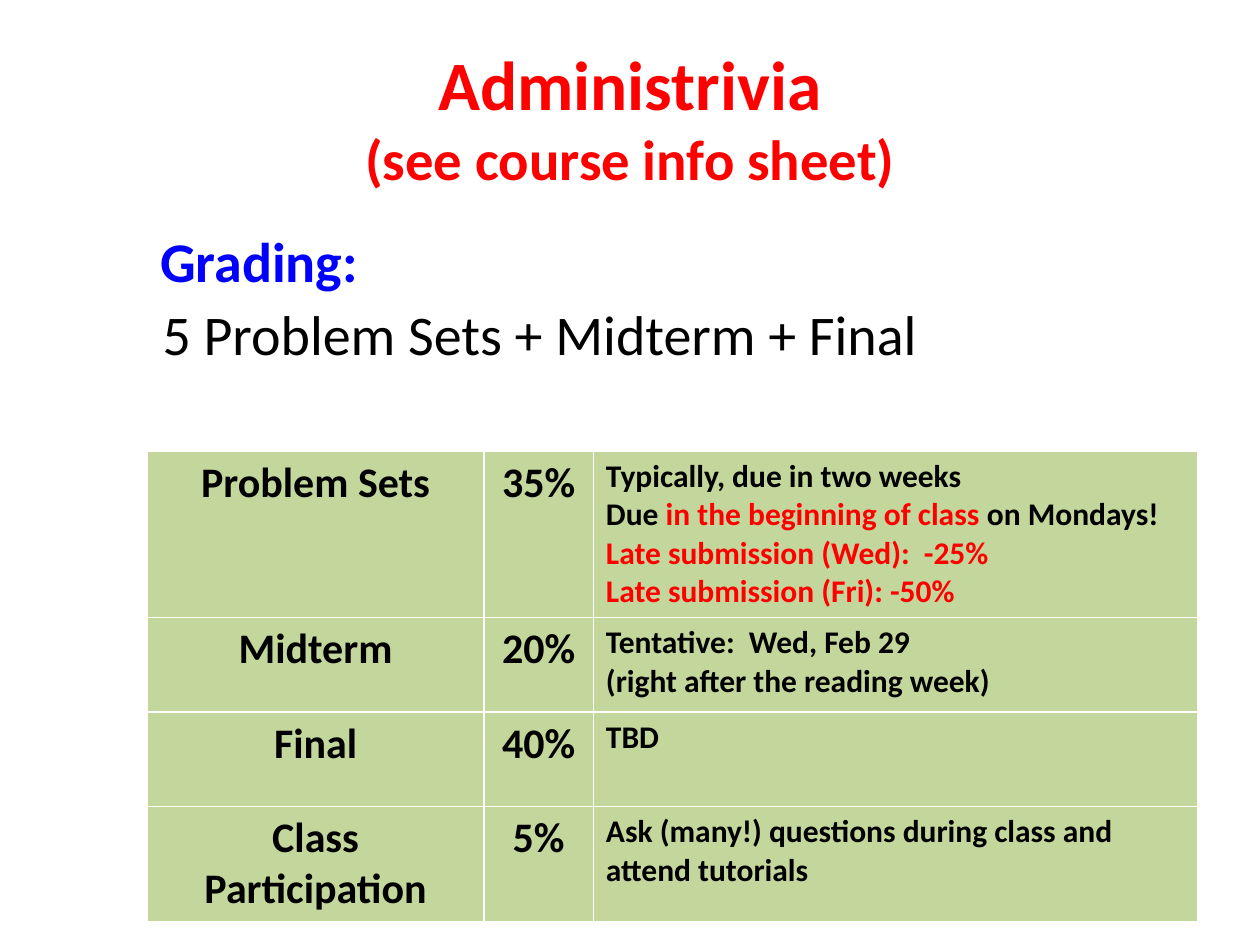
from dataclasses import dataclass

from pptx import Presentation
from pptx.dml.color import RGBColor
from pptx.enum import text
from pptx.oxml import ns
from pptx.util import Inches, Pt
from lxml import etree


@dataclass(frozen=True)
class Theme:
    font: str = "Calibri"
    red: str = "FF0000"
    blue: str = "0000FF"
    black: str = "000000"
    green: str = "C3D69B"
    title: float = 39.6
    subtitle: float = 32.4
    body: float = 32
    label: float = 24
    note: float = 18


THEME = Theme()

# Each note is a list of lines; each line is a list of (text, colour) runs
GRADING = [
    ("Problem Sets", "35%", [
        [("Typically, due in two weeks", THEME.black)],
        [("Due ", THEME.black), ("in the beginning of class ", THEME.red),
         ("on Mondays!", THEME.black)],
        [("Late submission (Wed):  -25%", THEME.red)],
        [("Late submission (Fri): -50%", THEME.red)],
    ]),
    ("Midterm", "20%", [
        [("Tentative:  Wed, Feb 29", THEME.black)],
        [("(right after the reading week)", THEME.black)],
    ]),
    ("Final", "40%", [[("TBD", THEME.black)]]),
    ("Class Participation", "5%", [
        [("Ask (many!) questions during class and attend tutorials", THEME.black)],
    ]),
]
COLUMN_WIDTHS = (2.67, 0.87, 4.8)
ROW_HEIGHTS = (0.67, 0.75, 0.75, 0.75)


def style_run(r, size, color, bold=True):
    r.font.name = THEME.font
    r.font.size = Pt(size)
    r.font.bold = bold
    r.font.color.rgb = RGBColor.from_string(color)


def place(sp, left, top, width, height):
    sp.left, sp.top = Inches(left), Inches(top)
    sp.width, sp.height = Inches(width), Inches(height)
    sp.text_frame.word_wrap = True
    sp.text_frame.auto_size = text.MSO_AUTO_SIZE.NONE


def set_title(sp, title, subtitle):
    place(sp, 0.5, 0.3, 9, 1.25)
    sp.text_frame.text = f"{title}\v{subtitle}"
    p = sp.text_frame.paragraphs[0]
    p.alignment = text.PP_ALIGN.CENTER
    for r, size in zip(p.runs, (THEME.title, THEME.subtitle)):
        style_run(r, size, THEME.red)
    # The line break takes the title size, so it does not stretch the line
    br = p._p.find(ns.qn("a:br"))
    etree.SubElement(br, ns.qn("a:rPr")).set("sz", str(round(THEME.title * 100)))


def set_body(sp, line, box, color, bold):
    place(sp, *box)
    sp.text_frame.text = line
    p = sp.text_frame.paragraphs[0]
    style_run(p.runs[0], THEME.body, color, bold)
    # No bullet and no hanging indent
    pPr = p._p.get_or_add_pPr()
    pPr.set("marL", "0")
    pPr.set("indent", "0")
    etree.SubElement(pPr, ns.qn("a:buNone"))


def fill_cell(cell, lines, size, align):
    cell.fill.solid()
    cell.fill.fore_color.rgb = RGBColor.from_string(THEME.green)
    tf = cell.text_frame
    for i, line in enumerate(lines):
        p = tf.add_paragraph() if i else tf.paragraphs[0]
        p.alignment = align
        for words, color in line:
            r = p.add_run()
            r.text = words
            style_run(r, size, color)


def add_grading_table(s):
    table = s.shapes.add_table(
        len(GRADING), len(COLUMN_WIDTHS), Inches(1.17), Inches(3.58),
        Inches(sum(COLUMN_WIDTHS)), Inches(sum(ROW_HEIGHTS))).table
    for column, width in zip(table.columns, COLUMN_WIDTHS):
        column.width = Inches(width)
    for row, height, (item, weight, notes) in zip(table.rows, ROW_HEIGHTS, GRADING):
        row.height = Inches(height)
        item_cell, weight_cell, notes_cell = row.cells
        for cell, label in ((item_cell, item), (weight_cell, weight)):
            fill_cell(cell, [[(label, THEME.black)]], THEME.label, text.PP_ALIGN.CENTER)
        fill_cell(notes_cell, notes, THEME.note, text.PP_ALIGN.LEFT)


def main():
    prs = Presentation()
    prs.slide_width, prs.slide_height = Inches(10), Inches(7.5)
    # "Two Content" layout: a title and two body placeholders
    s = prs.slides.add_slide(prs.slide_layouts[3])
    title, heading, summary = list(s.placeholders)[:3]

    # Title and grading summary
    set_title(title, "Administrivia", "(see course info sheet)")
    set_body(heading, "Grading:", (1.17, 1.75, 2.25, 0.67), THEME.blue, True)
    set_body(summary, "5 Problem Sets + Midterm + Final",
             (1.19, 2.33, 8.81, 0.67), THEME.black, False)

    # Grading breakdown
    add_grading_table(s)
    prs.save("out.pptx")


if __name__ == "__main__":
    main()
